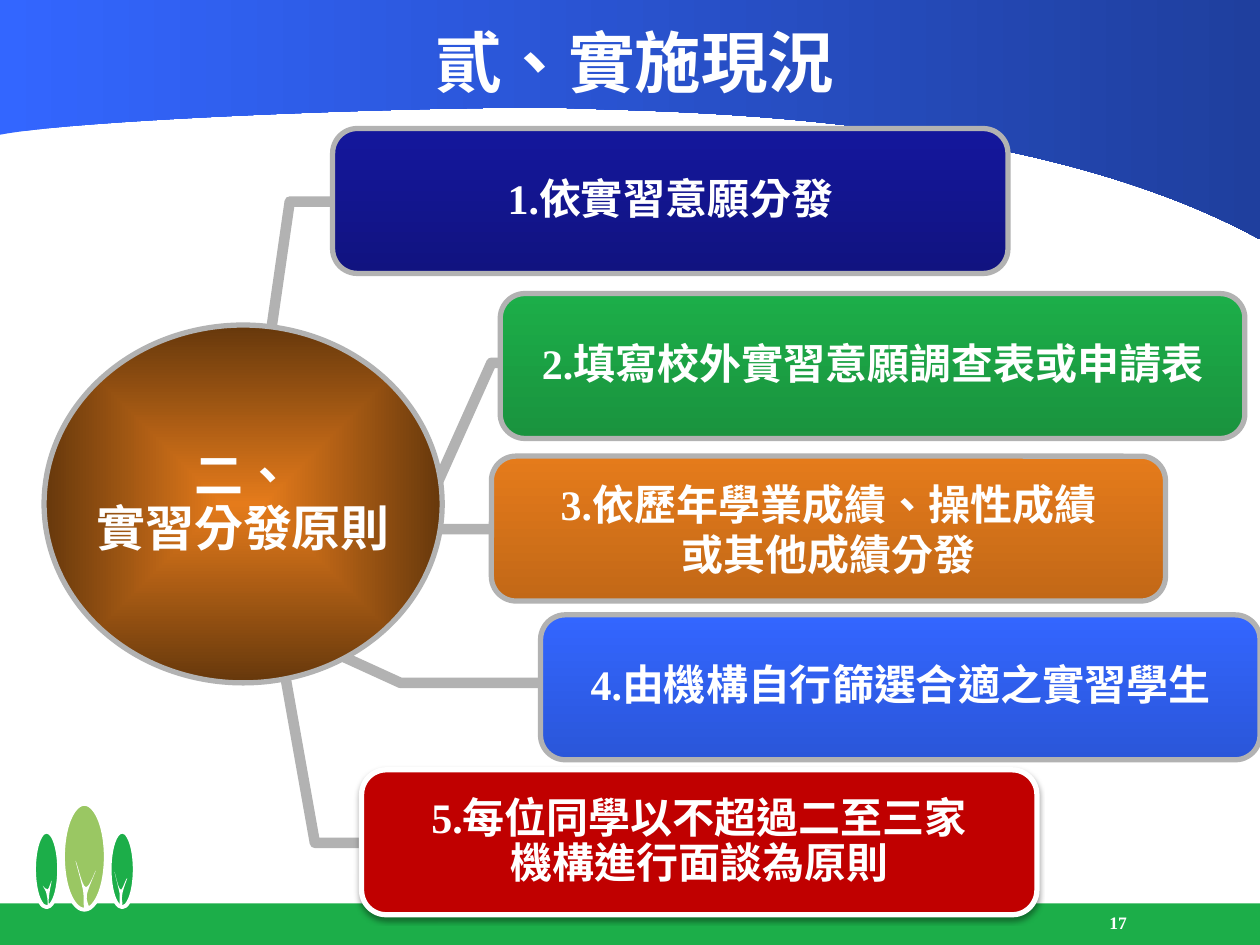
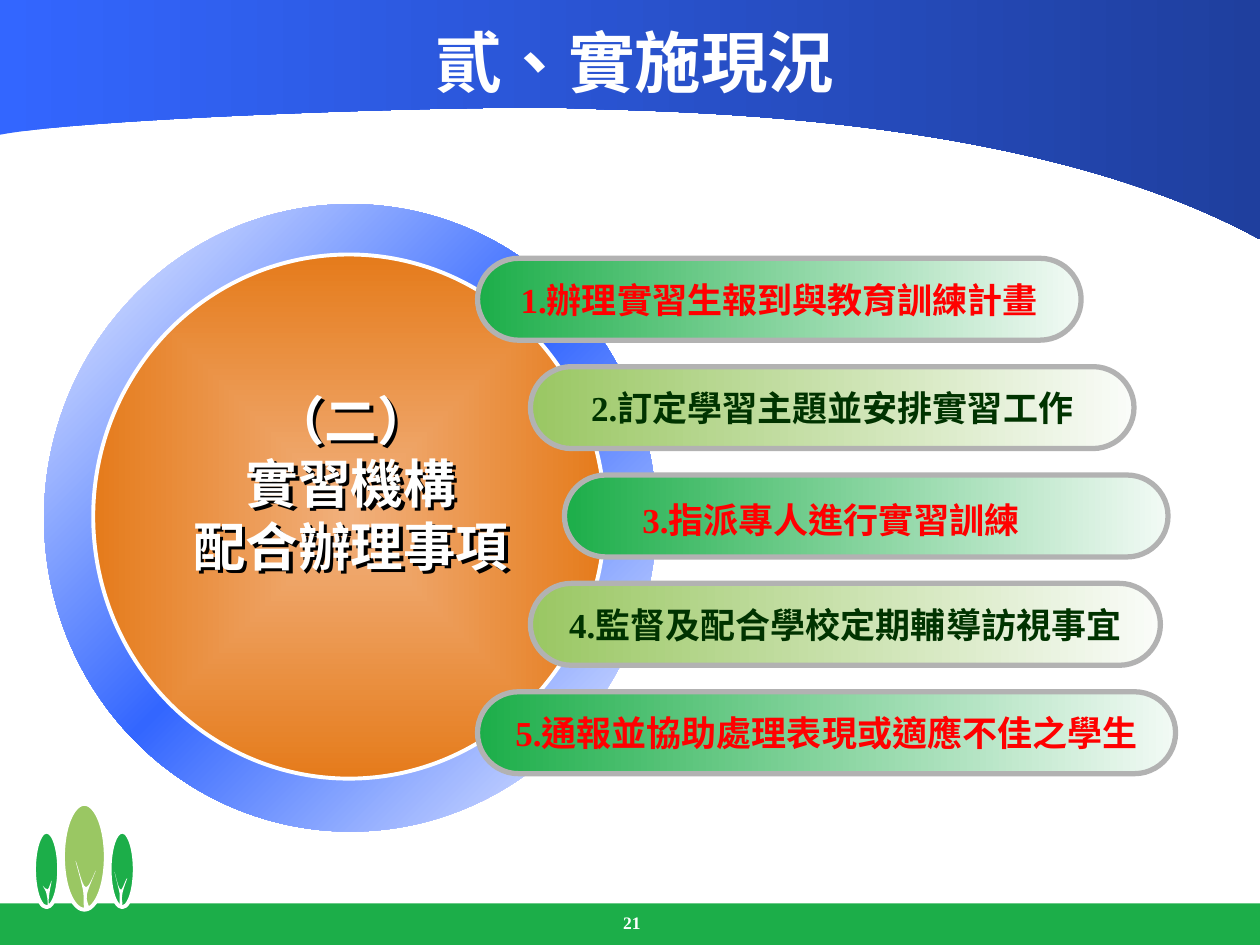
from dataclasses import dataclass
from typing import NamedTuple

from pptx import Presentation, oxml, util as u
from pptx.dml import color as dc
from pptx.enum import shapes as sh, text as tx
from pptx.oxml import ns

FONT = "Times New Roman"
TITLE = "貳、實施現況"
NS = 'xmlns:a="http://schemas.openxmlformats.org/drawingml/2006/main"'
HUES = {
    "white": "FFFFFF", "black": "000000", "gray": "B2B2B2", "red": "FF0000",
    "wine": "C00000", "pine": "003300", "green": "1CAE49", "moss": "1A933E",
    "lime": "9AC763", "blue": "3366FF", "royal": "2A56D9", "deep": "1F3F9E",
    "navy": "14179C", "night": "111380", "orange": "E57B1B", "rust": "C26817",
    "brown": "66380C", "peach": "F1B07C", "ice": "F0F3FF",
    "mint": "F2FAF5", "cream": "FAFCF9",
}

Point = tuple[float, float]


class Area(NamedTuple):
    left: float
    top: float
    width: float
    height: float


class Edge(NamedTuple):
    hue: str
    size: float


class Blend(NamedTuple):
    hues: tuple[str, ...]
    angle: int | None = 0


class Cast(NamedTuple):
    blur: float
    dist: float
    angle: int
    alpha: int


@dataclass
class Words:
    lines: tuple[str, ...]
    size: float
    hue: str = "white"
    space: float | None = None
    align: tx.PP_ALIGN = tx.PP_ALIGN.CENTER
    wrap: bool = False


@dataclass
class Box:
    area: Area
    fill: str | Blend
    lines: tuple[str, ...]
    space: float | None = 0.9
    edge: Edge = Edge("gray", 3)
    cast: Cast | None = None


@dataclass
class Pill:
    left: float
    width: float
    line: str


@dataclass
class Tree:
    area: Area
    hue: str
    vein: list[Point]


TREES = [
    Tree(Area(0.27, 6.6, 0.2, 0.6), "green", [
        (0.34, 7.03), (0.34, 7.04), (0.37, 7.07), (0.37, 7.1),
        (0.38, 7.13), (0.38, 7.19), (0.38, 7.2), (0.38, 7.22), (0.39, 7.21),
        (0.39, 7.19), (0.39, 7.18), (0.38, 7.15), (0.39, 7.12), (0.39, 7.08),
        (0.41, 7), (0.41, 6.99), (0.41, 6.98), (0.39, 7.05), (0.38, 7.06),
        (0.36, 7.06), (0.35, 7.04), (0.34, 7.03)]),
    Tree(Area(0.5, 6.38, 0.34, 0.84), "lime", [
        (0.6, 6.83), (0.6, 6.84), (0.65, 7.01), (0.66, 7.07),
        (0.67, 7.14), (0.66, 7.2), (0.67, 7.22), (0.68, 7.24), (0.7, 7.23),
        (0.71, 7.21), (0.71, 7.19), (0.68, 7.15), (0.69, 7.1), (0.7, 7.05),
        (0.76, 6.92), (0.76, 6.91), (0.76, 6.9), (0.71, 7.05), (0.68, 7.04),
        (0.65, 7.03), (0.62, 6.87), (0.6, 6.83)]),
    Tree(Area(0.87, 6.6, 0.2, 0.6), "green", [
        (0.91, 6.92), (0.91, 6.93), (0.94, 7.04), (0.95, 7.09),
        (0.95, 7.13), (0.95, 7.17), (0.95, 7.19), (0.96, 7.2), (0.97, 7.2),
        (0.97, 7.18), (0.98, 7.17), (0.96, 7.14), (0.97, 7.11), (0.97, 7.07),
        (1.01, 6.98), (1.01, 6.97), (1, 6.97), (0.97, 7.07), (0.96, 7.06),
        (0.94, 7.06), (0.92, 6.95), (0.91, 6.92)]),
]
WAVE = [(0, 1.07), (0.73, 0.93), (3.86, 0.83), (4.57, 0.86),
        (5.29, 0.89), (8.16, 0.89), (10, 1.9), (10, 0), (0, 0)]
LINKS = [
    [(2.87, 6.69), (2.5, 6.69), (2.21, 5.06)],
    [(2.64, 1.6), (2.3, 1.6), (2.04, 3.4)],
    [(4.64, 5.42), (3.18, 5.42), (2.04, 4.9)],
    [(4.53, 2.88), (3.9, 2.88), (3.42, 3.95)],
    [(3.9, 4.2), (3.32, 4.2), (2.87, 4.3)],
]
RULES = [
    Box(Area(2.64, 1.02, 5.36, 1.15), Blend(("navy", "night"), 90),
        ("1.依實習意願分發",)),
    Box(Area(3.97, 2.33, 5.91, 1.15), Blend(("green", "moss"), 90),
        ("2.填寫校外實習意願調查表或申請表",)),
    Box(Area(3.9, 3.62, 5.35, 1.15), Blend(("orange", "rust"), 90),
        ("3.依歷年學業成績、操性成績", "或其他成績分發"), None),
    Box(Area(4.29, 4.88, 5.71, 1.15), Blend(("blue", "royal"), 90),
        ("4.由機構自行篩選合適之實習學生",)),
    Box(Area(2.87, 6.11, 5.36, 1.15), "wine",
        ("5.每位同學以不超過二至三家", "機構進行面談為原則"),
        edge=Edge("white", 3), cast=Cast(3.1, 1.6, 90, 38)),
]
PILLS = [
    Pill(3.79, 4.79, "1.辦理實習生報到與教育訓練計畫"),
    Pill(4.21, 4.79, "2.訂定學習主題並安排實習工作"),
    Pill(4.48, 4.79, ""),
    Pill(4.21, 5, "4.監督及配合學校定期輔導訪視事宜"),
    Pill(3.79, 5.54, "5.通報並協助處理表現或適應不佳之學生"),
]


def rgb(hue: str) -> dc.RGBColor:
    return dc.RGBColor.from_string(HUES[hue])


def inch(area: Area) -> list[u.Length]:
    return [u.Inches(side) for side in area]


def blend(shape, mix: Blend) -> None:
    last = len(mix.hues) - 1
    stops = "".join(
        f'<a:gs pos="{100000 * i // last}"><a:srgbClr val="{HUES[hue]}"/></a:gs>'
        for i, hue in enumerate(mix.hues))
    if mix.angle is None:
        way = ('<a:path path="rect"><a:fillToRect l="50000" t="50000" '
               'r="50000" b="50000"/></a:path>')
    else:
        way = f'<a:lin ang="{mix.angle * 60000}" scaled="0"/>'
    shape.fill.gradient()
    props = shape.element.spPr
    props.replace(props.find(ns.qn("a:gradFill")), oxml.parse_xml(
        f'<a:gradFill {NS} rotWithShape="1"><a:gsLst>{stops}</a:gsLst>{way}</a:gradFill>'))


def style(shape, fill: str | Blend | None, edge: Edge | None = None) -> None:
    shape.shadow.inherit = False
    if fill is None:
        shape.fill.background()
    elif isinstance(fill, Blend):
        blend(shape, fill)
    else:
        shape.fill.solid()
        shape.fill.fore_color.rgb = rgb(fill)
    if edge is None:
        shape.line.fill.background()
    else:
        shape.line.color.rgb = rgb(edge.hue)
        shape.line.width = u.Pt(edge.size)


def shade(shape, cast: Cast) -> None:
    shape.shadow.inherit = False
    shape.element.spPr.find(ns.qn("a:effectLst")).append(oxml.parse_xml(
        f'<a:outerShdw {NS} blurRad="{u.Pt(cast.blur)}" dist="{u.Pt(cast.dist)}" '
        f'dir="{cast.angle * 60000}" algn="ctr" rotWithShape="0">'
        f'<a:srgbClr val="{HUES["black"]}"><a:alpha val="{cast.alpha * 1000}"/>'
        '</a:srgbClr></a:outerShdw>'))


def write(shape, words: Words, anchor=tx.MSO_ANCHOR.MIDDLE) -> None:
    frame = shape.text_frame
    frame.word_wrap = words.wrap
    frame.vertical_anchor = anchor
    for i, line in enumerate(words.lines):
        para = frame.add_paragraph() if i else frame.paragraphs[0]
        para.alignment = words.align
        if words.space:
            para.line_spacing = words.space
        run = para.add_run()
        run.text = line
        run.font.name = FONT
        run.font.size = u.Pt(words.size)
        run.font.bold = True
        run.font.color.rgb = rgb(words.hue)
    for props in shape.element.iter(ns.qn("a:rPr")):
        props.set("lang", "zh-TW")


def draw(slide, kind, area: Area, fill: str | Blend, edge: Edge | None = None):
    shape = slide.shapes.add_shape(kind, *inch(area))
    style(shape, fill, edge)
    return shape


def trace(slide, points: list[Point], fill: str | Blend | None,
          edge: Edge | None = None):
    spots = [(u.Inches(x), u.Inches(y)) for x, y in points]
    pen = slide.shapes.build_freeform(*spots[0])
    pen.add_line_segments(spots[1:], close=fill is not None)
    shape = pen.convert_to_shape()
    style(shape, fill, edge)
    return shape


def bend(shape, count: int) -> None:
    legs = list(shape.element.iter(ns.qn("a:lnTo")))[:3 * count]
    for at in range(0, len(legs), 3):
        arc = oxml.parse_xml(f"<a:cubicBezTo {NS}/>")
        legs[at].addprevious(arc)
        for leg in legs[at:at + 3]:
            arc.append(leg[0])
            leg.getparent().remove(leg)


def label(slide, area: Area, words: Words):
    shape = slide.shapes.add_textbox(*inch(area))
    write(shape, words, tx.MSO_ANCHOR.TOP)
    return shape


def scene(deck, layout) -> None:
    slide = deck.slides[0]
    old = len(slide.shapes)
    bend(trace(slide, WAVE, Blend(("blue", "deep"))), 2)
    draw(slide, sh.MSO_SHAPE.RECTANGLE, Area(0, 7.17, 10, 0.33), "green")
    for tree in TREES:
        draw(slide, sh.MSO_SHAPE.OVAL, tree.area, tree.hue, Edge("white", 2.25))
    for tree in TREES:
        bend(trace(slide, tree.vein, "white"), len(tree.vein) // 3)
    base = layout.shapes.element
    for i, shape in enumerate(list(slide.shapes)[old:]):
        base.insert(2 + i, shape.element)
    for i, node in enumerate(base.iter(ns.qn("p:cNvPr")), 1):
        node.set("id", str(i))


def start(deck, layout, page: str, left: float):
    slide = deck.slides.add_slide(layout)
    title = slide.shapes.title
    title.left, title.top, title.width, title.height = inch(Area(0.5, 0.17, 9.08, 0.62))
    write(title, Words((TITLE,), 38, wrap=True))
    label(slide, Area(left, 7.19, 2.33, 0.23), Words((page,), 10, wrap=True))
    return slide


def assign(slide) -> None:
    for link in LINKS:
        trace(slide, link, None, Edge("gray", 6))
    hub = draw(slide, sh.MSO_SHAPE.OVAL, Area(0.35, 2.58, 3.16, 2.84),
               Blend(("orange", "brown"), None), Edge("gray", 3))
    write(hub, Words(("二、", "實習分發原則"), 28, space=0.9))
    for rule in RULES:
        box = draw(slide, sh.MSO_SHAPE.ROUNDED_RECTANGLE, rule.area, rule.fill, rule.edge)
        box.adjustments[0] = 0.17
        write(box, Words(rule.lines, 24, space=rule.space))
        if rule.cast:
            shade(box, rule.cast)


def duties(slide) -> None:
    ring = draw(slide, sh.MSO_SHAPE.DONUT, Area(0.35, 1.62, 4.86, 4.98),
                Blend(("ice", "blue", "ice"), 45))
    ring.adjustments[0] = 0.09
    draw(slide, sh.MSO_SHAPE.OVAL, Area(0.74, 2.02, 4.06, 4.16),
         Blend(("peach", "orange"), None), Edge("white", 2.25))
    looks = [(Blend(("green", "mint")), "red"), (Blend(("lime", "cream")), "pine")]
    for i, pill in enumerate(PILLS):
        fill, hue = looks[i % 2]
        area = Area(pill.left, 2.05 + 0.86 * i, pill.width, 0.65)
        bar = draw(slide, sh.MSO_SHAPE.ROUNDED_RECTANGLE, area, fill, Edge("gray", 3))
        bar.adjustments[0] = 0.5
        if pill.line:
            write(bar, Words((pill.line,), 20, hue))
    head = label(slide, Area(1.42, 3.03, 2.73, 1.62),
                 Words(("（二）", "實習機構", "配合辦理事項"), 30))
    shade(head, Cast(0, 2.8, 45, 100))
    label(slide, Area(5, 3.91, 3.84, 0.43),
          Words(("3.指派專人進行實習訓練",), 20, "red", align=tx.PP_ALIGN.LEFT, wrap=True))


def main() -> None:
    deck = Presentation()
    deck.slide_width, deck.slide_height = u.Inches(10), u.Inches(7.5)
    layout = deck.slide_layouts[5]
    first = start(deck, layout, "17", 7.71)
    scene(deck, layout)
    assign(first)
    duties(start(deck, layout, "21", 3.85))
    deck.save("out.pptx")


if __name__ == "__main__":
    main()
